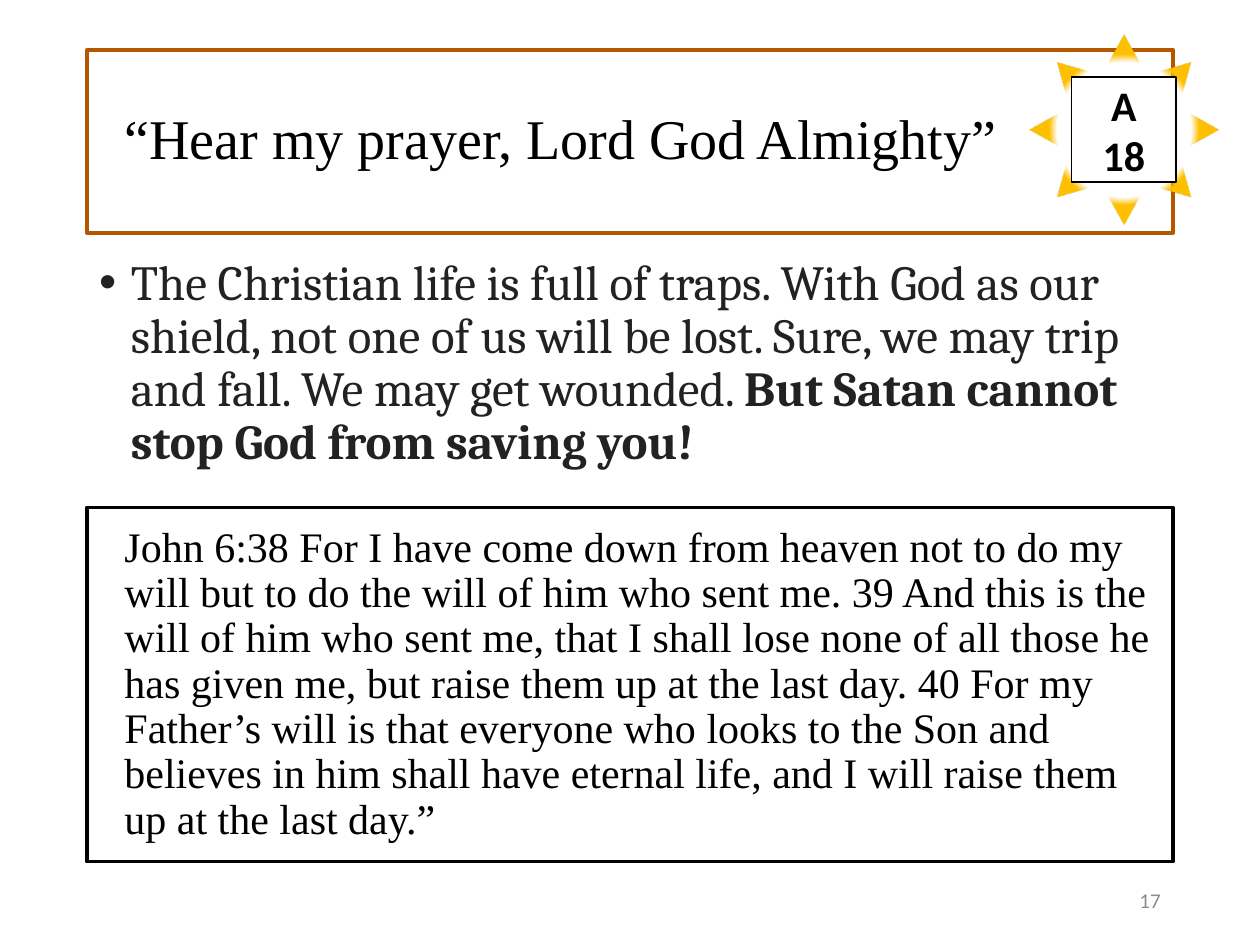
from lxml.etree import SubElement
from pptx import Presentation
from pptx.dml.color import RGBColor
from pptx.enum.shapes import MSO_SHAPE as Preset
from pptx.enum.text import MSO_ANCHOR as Anchor, MSO_AUTO_SIZE as AutoSize, PP_ALIGN as Align
from pptx.oxml import parse_xml
from pptx.oxml.ns import nsdecls, qn
from pptx.util import Cm, Pt

WHITE = RGBColor(0xFF, 0xFF, 0xFF)
BLACK = RGBColor(0, 0, 0)
RUST = RGBColor(0xB6, 0x57, 0x00)
CHARCOAL = RGBColor(0x22, 0x22, 0x22)
GREY = RGBColor(0x8C, 0x8C, 0x8C)
YELLOW = RGBColor(0xFF, 0xFF, 0x00)
AMBER = RGBColor(0xFF, 0xC0, 0x00)

SERIF = "Times New Roman"
COLUMN_LEFT, COLUMN_WIDTH = 1.75, 21.9
WIDE_INSET, SIDE_INSET, EDGE_INSET = Cm(0.76), Cm(0.25), Cm(0.13)

TITLE = "“Hear my prayer, Lord God Almighty”"
MESSAGE = [
    ("The Christian life is full of traps. With God as our shield, not one of us will be lost. "
     "Sure, we may trip and fall. We may get wounded. ", False),
    ("But Satan cannot stop God from saving you!", True),
]
VERSE = (
    "John 6:38 For I have come down from heaven not to do my will but to do the will of him "
    "who sent me. 39 And this is the will of him who sent me, that I shall lose none of all "
    "those he has given me, but raise them up at the last day. 40 For my Father’s will is that "
    "everyone who looks to the Son and believes in him shall have eternal life, and I will "
    "raise them up at the last day.”"
)


def apply_format(target, values):
    for name, value in values.items():
        setattr(target, name, value)


def place(shape, box):
    left, top, width, height = map(Cm, box)
    apply_format(shape, dict(left=left, top=top, width=width, height=height))


def format_frame(frame, anchor, left=SIDE_INSET, right=SIDE_INSET):
    apply_format(frame, dict(
        word_wrap=True, auto_size=AutoSize.NONE, vertical_anchor=anchor,
        margin_left=left, margin_right=right,
        margin_top=EDGE_INSET, margin_bottom=EDGE_INSET))


def format_paragraph(paragraph, font, size, color, align=Align.LEFT, spacing=0.9, bold=False):
    apply_format(paragraph, dict(alignment=align, line_spacing=spacing,
                                 space_before=Pt(0), space_after=Pt(0)))
    apply_format(paragraph.font, dict(name=font, size=Pt(size), bold=bold))
    paragraph.font.color.rgb = color


def outline(shape, color, width):
    """Give the shape a white face and a coloured border."""
    shape.fill.solid()
    shape.fill.fore_color.rgb = WHITE
    shape.line.color.rgb = color
    shape.line.width = Pt(width)


def add_plain_shape(slide, preset, box):
    shape = slide.shapes.add_shape(preset, *map(Cm, box))
    shape.shadow.inherit = False
    return shape


def fill_title(slide, box):
    title = slide.shapes.title
    place(title, box)
    outline(title, RUST, 2.25)
    title.text = TITLE
    format_frame(title.text_frame, Anchor.MIDDLE, WIDE_INSET, WIDE_INSET)
    format_paragraph(title.text_frame.paragraphs[0], SERIF, 32, BLACK)


def fill_message(slide, box):
    body = slide.placeholders[1]
    place(body, box)
    format_frame(body.text_frame, Anchor.TOP)
    paragraph = body.text_frame.paragraphs[0]
    properties = paragraph._p.get_or_add_pPr()
    properties.set("marL", str(Cm(0.64)))
    properties.set("indent", str(Cm(-0.64)))
    SubElement(properties, qn("a:buFont"), typeface="Arial")
    SubElement(properties, qn("a:buChar"), char="•")
    format_paragraph(paragraph, "Cambria", 28, CHARCOAL)
    for text, bold in MESSAGE:
        run = paragraph.add_run()
        run.text = text
        run.font.bold = bold


def add_verse(slide, box):
    verse = add_plain_shape(slide, Preset.RECTANGLE, box)
    outline(verse, BLACK, 2)
    verse.text_frame.text = VERSE
    format_frame(verse.text_frame, Anchor.MIDDLE, left=WIDE_INSET)
    format_paragraph(verse.text_frame.paragraphs[0], SERIF, 24, BLACK)


def fill_with_glow(shape):
    """Fade the fill from a clear centre to solid amber at the rim."""
    shape.fill.background()
    no_fill = shape._element.spPr.find(qn("a:noFill"))
    stops = "".join(
        f'<a:gs pos="{position * 1000}"><a:srgbClr val="{color}">'
        f'<a:alpha val="{opacity * 1000}"/></a:srgbClr></a:gs>'
        for position, color, opacity in [(0, YELLOW, 0), (50, AMBER, 0), (56, AMBER, 100)])
    gradient = parse_xml(
        f'<a:gradFill {nsdecls("a")} rotWithShape="1"><a:gsLst>{stops}</a:gsLst>'
        '<a:path path="circle"><a:fillToRect l="50000" t="50000" r="50000" b="50000"/></a:path>'
        '</a:gradFill>')
    no_fill.getparent().replace(no_fill, gradient)


def add_sun_badge(slide, box, label_size=2.11):
    left, top, width, height = box
    sun = add_plain_shape(slide, Preset.SUN, box)
    sun.adjustments[0] = 0.19
    sun.line.fill.background()
    fill_with_glow(sun)

    label_box = (left + (width - label_size) / 2, top + (height - label_size) / 2,
                 label_size, label_size)
    label = add_plain_shape(slide, Preset.RECTANGLE, label_box)
    outline(label, BLACK, 1)
    label.text_frame.text = "A\n18"
    format_frame(label.text_frame, Anchor.MIDDLE)
    for paragraph in label.text_frame.paragraphs:
        format_paragraph(paragraph, "Calibri", 24, BLACK, Align.CENTER, 1.0, bold=True)


def add_page_number(slide, box):
    number = slide.shapes.add_textbox(*map(Cm, box))
    number.text_frame.text = "17"
    format_frame(number.text_frame, Anchor.MIDDLE)
    format_paragraph(number.text_frame.paragraphs[0], "Calibri", 12, GREY, Align.RIGHT, 1.0)


def main():
    presentation = Presentation()
    presentation.slide_width, presentation.slide_height = Cm(25.4), Cm(19.05)
    slide = presentation.slides.add_slide(presentation.slide_layouts[1])
    fill_title(slide, (COLUMN_LEFT, 1.01, COLUMN_WIDTH, 3.68))
    fill_message(slide, (COLUMN_LEFT, 5.08, COLUMN_WIDTH, 12.09))
    add_verse(slide, (COLUMN_LEFT, 10.23, COLUMN_WIDTH, 7.14))
    add_sun_badge(slide, (20.75, 0.71, 3.81, 3.81))
    add_page_number(slide, (17.93, 17.65, 5.72, 1.01))
    presentation.save("out.pptx")


if __name__ == "__main__":
    main()
